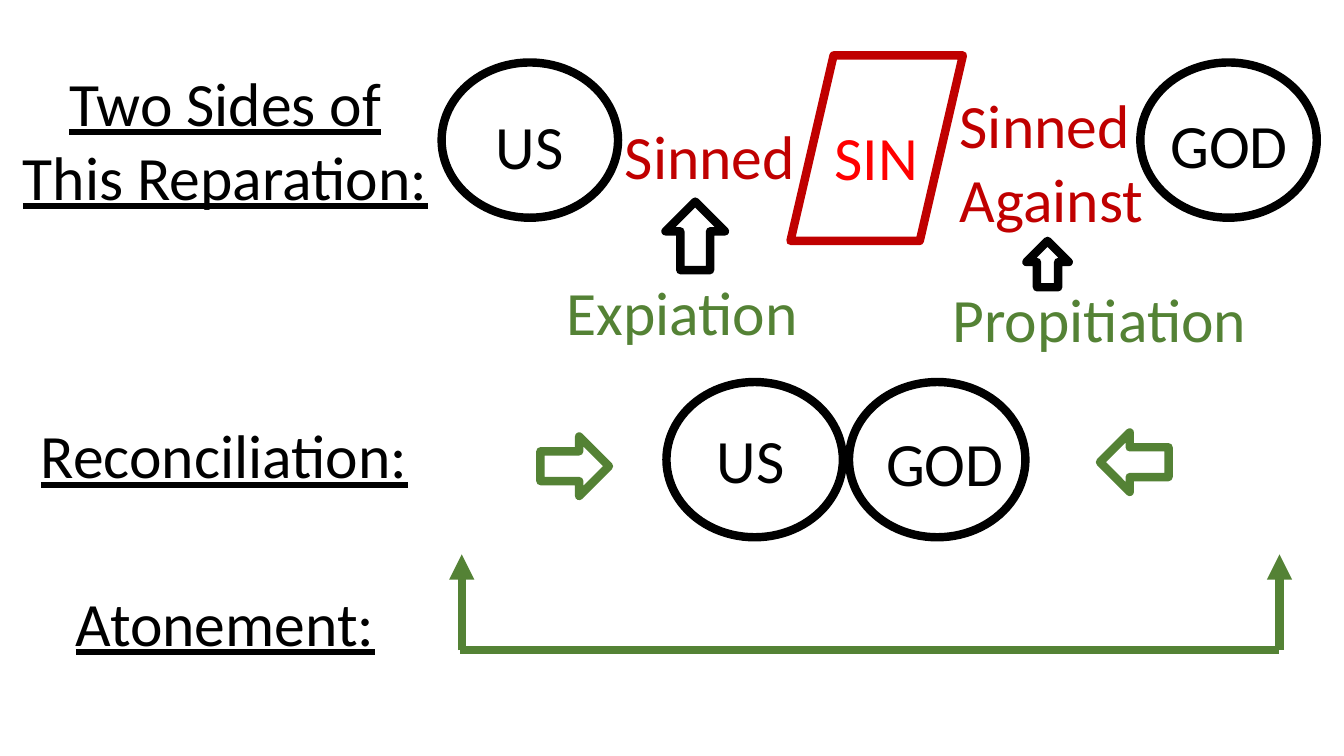
from typing import NamedTuple

from lxml.etree import SubElement
from pptx import Presentation
from pptx.dml.color import RGBColor
from pptx.enum.shapes import MSO_CONNECTOR, MSO_SHAPE
from pptx.enum.text import MSO_ANCHOR, MSO_AUTO_SIZE, PP_ALIGN
from pptx.oxml.ns import qn
from pptx.util import Inches, Pt

BLACK = RGBColor(0x00, 0x00, 0x00)
RED = RGBColor(0xFF, 0x00, 0x00)
DARK_RED = RGBColor(0xC0, 0x00, 0x00)
GREEN = RGBColor(0x54, 0x82, 0x35)

LINE_WIDTH = Pt(6)
HEADING_WIDTH = 4.33
ONE_LINE = 0.84
TWO_LINES = 1.58
BRACKET_LEFT, BRACKET_RIGHT = 4.58, 12.69
BRACKET_TOP, BRACKET_BOTTOM = 5.5, 6.45


class Outline(NamedTuple):
    kind: MSO_SHAPE
    left: float
    top: float
    width: float
    height: float
    color: RGBColor = BLACK


class Label(NamedTuple):
    text: str
    left: float
    top: float
    width: float
    height: float = ONE_LINE
    color: RGBColor = BLACK
    heading: bool = False


class Line(NamedTuple):
    x1: float
    y1: float
    x2: float
    y2: float
    arrow: bool = False


CIRCLES = [
    Outline(MSO_SHAPE.OVAL, left, top, 1.75, 1.54)
    for left, top in [(4.38, 0.62), (11.31, 0.62), (6.61, 3.79), (8.42, 3.79)]
]
OUTLINES = CIRCLES + [
    Outline(MSO_SHAPE.PARALLELOGRAM, 7.84, 0.55, 1.71, 1.84, DARK_RED),
    Outline(MSO_SHAPE.UP_ARROW, 6.6, 2.0, 0.59, 0.68),
    Outline(MSO_SHAPE.UP_ARROW, 10.18, 2.39, 0.42, 0.46),
    Outline(MSO_SHAPE.RIGHT_ARROW, 5.36, 4.33, 0.68, 0.59, GREEN),
    Outline(MSO_SHAPE.LEFT_ARROW, 10.91, 4.29, 0.68, 0.59, GREEN),
]

TITLE = Label("Two Sides of This Reparation:", 0.07, 0.59, HEADING_WIDTH, TWO_LINES, heading=True)
LABELS = [
    Label("Reconciliation:", 0.06, 4.09, HEADING_WIDTH, heading=True),
    Label("Atonement:", 0.07, 5.75, HEADING_WIDTH, heading=True),
    Label("US", 4.82, 1.02, 0.88),
    Label("GOD", 11.51, 1.01, 1.46),
    Label("US", 7.01, 4.14, 0.88),
    Label("GOD", 8.69, 4.17, 1.46),
    Label("SIN", 8.18, 1.13, 1.12, color=RED),
    Label("Sinned", 6.1, 1.12, 1.93, color=DARK_RED),
    Label("Sinned Against", 9.42, 0.81, 2.23, TWO_LINES, DARK_RED),
    Label("Expiation", 5.52, 2.67, 2.66, color=GREEN),
    Label("Propitiation", 9.35, 2.74, 3.36, color=GREEN),
]

BRACKET = [
    Line(BRACKET_LEFT, BRACKET_BOTTOM, BRACKET_LEFT, BRACKET_TOP, arrow=True),
    Line(BRACKET_RIGHT, BRACKET_BOTTOM, BRACKET_RIGHT, BRACKET_TOP, arrow=True),
    Line(BRACKET_LEFT - 0.02, BRACKET_BOTTOM, BRACKET_RIGHT, BRACKET_BOTTOM),
]


def draw_outline(shapes, outline: Outline) -> None:
    sp = shapes.add_shape(outline.kind, *map(Inches, outline[1:5]))
    sp.shadow.inherit = False
    sp.fill.background()
    sp.line.color.rgb = outline.color
    sp.line.width = LINE_WIDTH


def write_label(sp, label: Label) -> None:
    """Place and format a text box or placeholder as the label describes."""
    sp.left, sp.top, sp.width, sp.height = map(Inches, label[1:5])
    tf = sp.text_frame
    tf.text = label.text
    tf.word_wrap = True
    tf.auto_size = MSO_AUTO_SIZE.SHAPE_TO_FIT_TEXT
    tf.vertical_anchor = MSO_ANCHOR.TOP
    p = tf.paragraphs[0]
    p.alignment = PP_ALIGN.CENTER if label.heading else PP_ALIGN.LEFT
    p.font.name = "Calibri"
    p.font.size = Pt(44)
    p.font.color.rgb = label.color
    if label.heading:
        p.font.underline = True


def draw_line(shapes, line: Line) -> None:
    cxn = shapes.add_connector(MSO_CONNECTOR.STRAIGHT, *map(Inches, line[:4]))
    cxn.line.color.rgb = GREEN
    cxn.line.width = LINE_WIDTH
    if line.arrow:
        SubElement(cxn.line._get_or_add_ln(), qn("a:tailEnd"), type="triangle")
    SubElement(cxn._element.spPr, qn("a:effectLst"))


def main() -> None:
    prs = Presentation()
    prs.slide_width, prs.slide_height = Inches(13.33), Inches(7.5)
    s = prs.slides.add_slide(prs.slide_layouts.get_by_name("Title Only"))

    write_label(s.shapes.title, TITLE)
    for outline in OUTLINES:
        draw_outline(s.shapes, outline)
    for label in LABELS:
        write_label(s.shapes.add_textbox(0, 0, 0, 0), label)
    for line in BRACKET:
        draw_line(s.shapes, line)

    prs.save("out.pptx")


if __name__ == "__main__":
    main()
